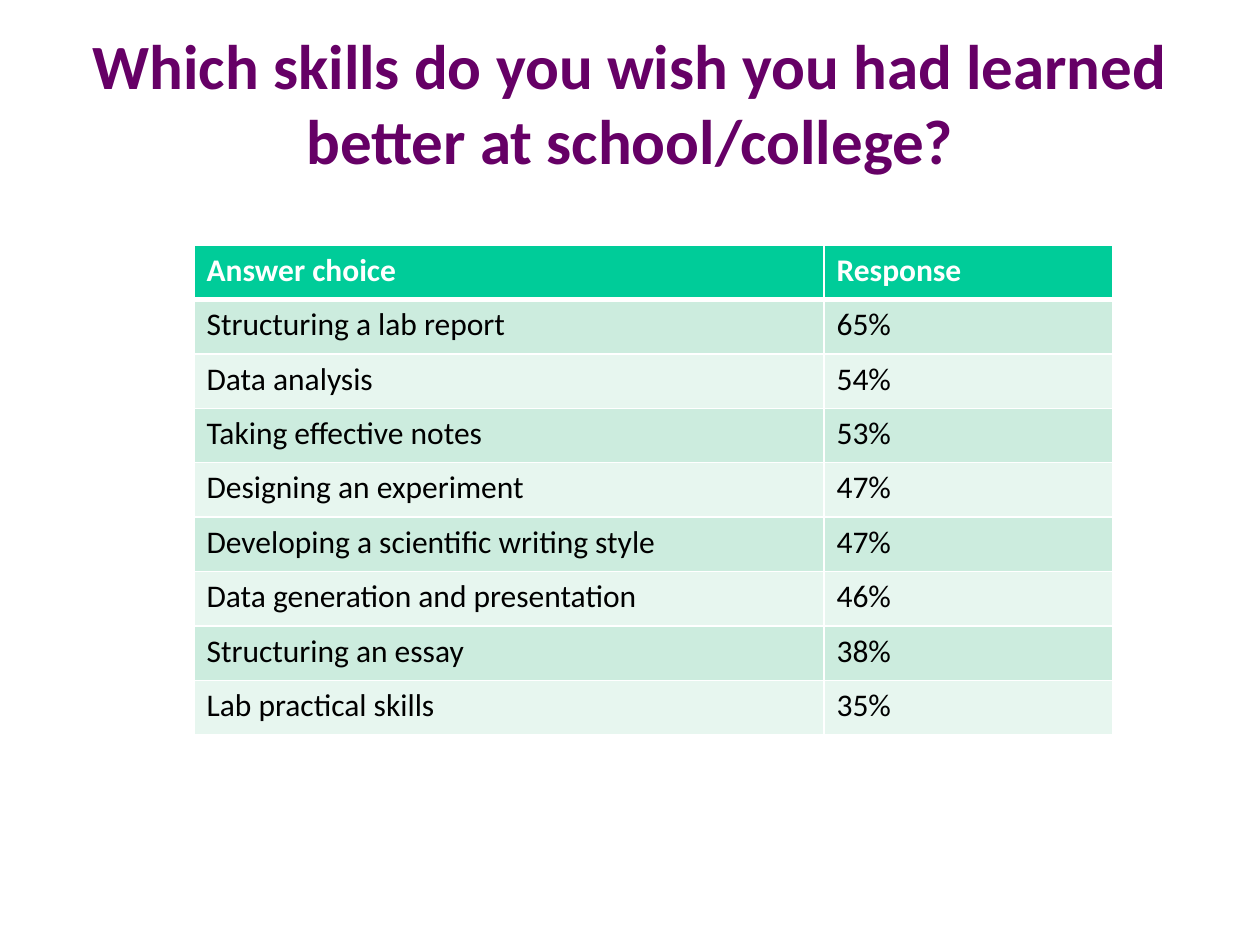
from lxml.etree import SubElement
from pptx import Presentation
from pptx.dml.color import RGBColor
from pptx.enum.text import MSO_ANCHOR, PP_ALIGN
from pptx.oxml.ns import qn
from pptx.util import Inches, Pt

TITLE = "Which skills do you wish you had learned better at school/college?"
ROWS = [
    ("Answer choice", "Response"),
    ("Structuring a lab report", "65%"),
    ("Data analysis", "54%"),
    ("Taking effective notes", "53%"),
    ("Designing an experiment", "47%"),
    ("Developing a scientific writing style", "47%"),
    ("Data generation and presentation", "46%"),
    ("Structuring an essay", "38%"),
    ("Lab practical skills", "35%"),
]
COLUMN_WIDTHS = (630, 289)
TABLE_LEFT, TABLE_TOP, TABLE_HEIGHT = 194, 245, 490

PURPLE = RGBColor(0x66, 0x00, 0x66)
GREEN = RGBColor(0x00, 0xCC, 0x99)
MINT = RGBColor(0xCC, 0xEC, 0xDE)
PALE_MINT = RGBColor(0xE7, 0xF6, 0xEF)
WHITE = RGBColor(0xFF, 0xFF, 0xFF)
BLACK = RGBColor(0x00, 0x00, 0x00)
FONT = "Calibri"


def px(length):
    return round(length * Inches(1) / 126)


def style(paragraph, size, color, bold):
    paragraph.font.name = FONT
    paragraph.font.size = Pt(size)
    paragraph.font.bold = bold
    paragraph.font.color.rgb = color


def add_borders(cell, widths):
    properties = cell._tc.get_or_add_tcPr()
    for position, (side, width) in enumerate(widths.items()):
        line = properties.makeelement(qn(f"a:{side}"), {"w": str(Pt(width))})
        fill = SubElement(line, qn("a:solidFill"))
        SubElement(fill, qn("a:srgbClr"), val=str(WHITE))
        properties.insert(position, line)


def add_title(page):
    title = page.shapes.title
    title.left, title.top, title.width, title.height = 0, 0, px(1260), px(204)
    frame = title.text_frame
    frame.text = TITLE
    frame.word_wrap = True
    frame.vertical_anchor = MSO_ANCHOR.MIDDLE
    paragraph = frame.paragraphs[0]
    paragraph.alignment = PP_ALIGN.CENTER
    style(paragraph, 36, PURPLE, True)


def add_responses(page):
    table = page.shapes.add_table(
        len(ROWS), len(COLUMN_WIDTHS), px(TABLE_LEFT), px(TABLE_TOP),
        px(sum(COLUMN_WIDTHS)), px(TABLE_HEIGHT)).table
    for column, width in zip(table.columns, COLUMN_WIDTHS):
        column.width = px(width)
    for row_number, texts in enumerate(ROWS):
        header = row_number == 0
        color = GREEN if header else MINT if row_number % 2 else PALE_MINT
        borders = {"lnL": 1, "lnR": 1, "lnT": 3 if row_number == 1 else 1,
                   "lnB": 3 if header else 1}
        for column_number, text in enumerate(texts):
            cell = table.cell(row_number, column_number)
            cell.text = text
            cell.fill.solid()
            cell.fill.fore_color.rgb = color
            add_borders(cell, borders)
            style(cell.text_frame.paragraphs[0], 18,
                  WHITE if header else BLACK, header)


def main():
    deck = Presentation()
    deck.slide_width, deck.slide_height = px(1260), px(945)
    page = deck.slides.add_slide(deck.slide_layouts[5])
    add_title(page)
    add_responses(page)
    deck.save("out.pptx")


if __name__ == "__main__":
    main()
